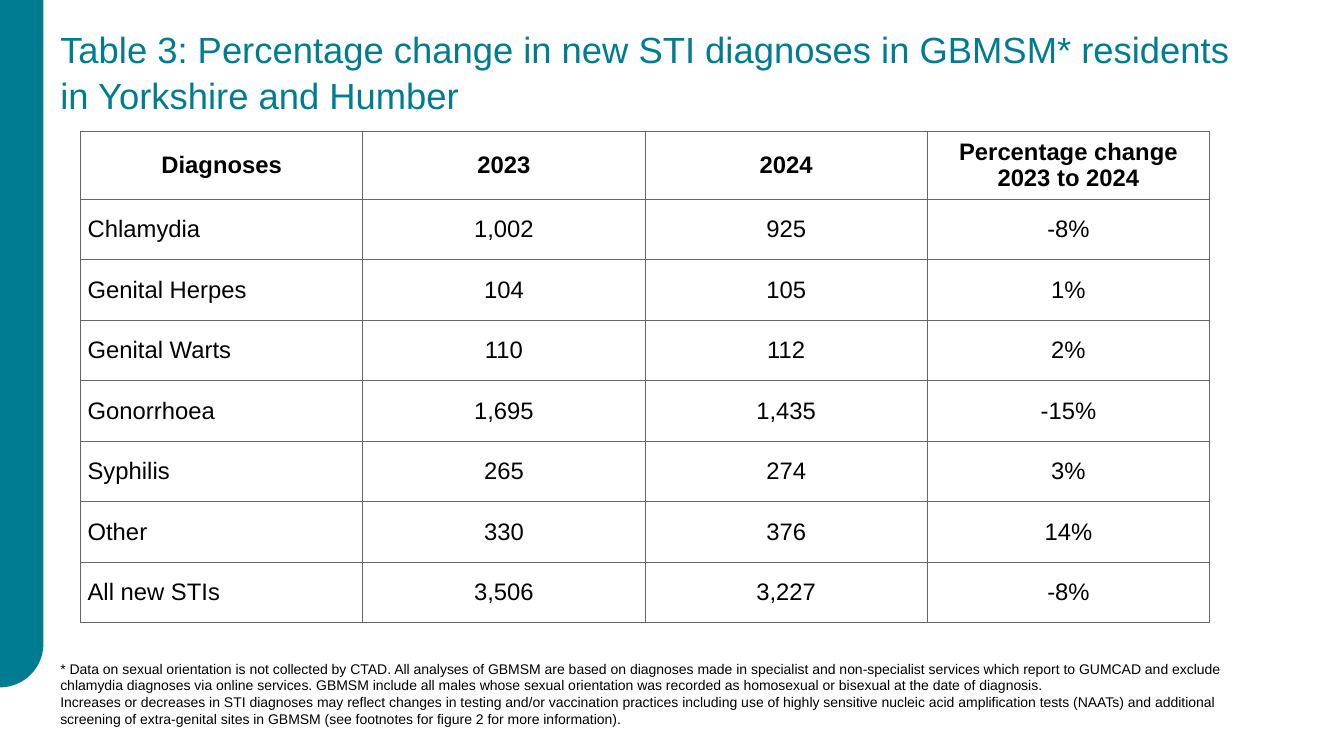
import math

import lxml.etree
import pptx
import pptx.dml.color
import pptx.enum.text
import pptx.oxml.ns
import pptx.util

Pt = pptx.util.Pt
ALIGN = pptx.enum.text.PP_ALIGN

COLOURS = {"teal": "007C91", "black": "000000", "grid": "666666"}
FONT = "Arial"

TITLE = (
    "Table 3: Percentage change in new STI diagnoses in GBMSM* residents "
    "in Yorkshire and Humber"
)
FOOTNOTE = (
    "* Data on sexual orientation is not collected by CTAD. All analyses of GBMSM "
    "are based on diagnoses made in specialist and non-specialist services which "
    "report to GUMCAD and exclude chlamydia diagnoses via online services. GBMSM "
    "include all males whose sexual orientation was recorded as homosexual or "
    "bisexual at the date of diagnosis.\v"
    "Increases or decreases in STI diagnoses may reflect changes in testing and/or "
    "vaccination practices including use of highly sensitive nucleic acid "
    "amplification tests (NAATs) and additional screening of extra-genital sites "
    "in GBMSM (see footnotes for figure 2 for more information)."
)
DIAGNOSES = [
    ("Diagnoses", "2023", "2024", "Percentage change\v2023 to 2024"),
    ("Chlamydia", "1,002", "925", "-8%"),
    ("Genital Herpes", "104", "105", "1%"),
    ("Genital Warts", "110", "112", "2%"),
    ("Gonorrhoea", "1,695", "1,435", "-15%"),
    ("Syphilis", "265", "274", "3%"),
    ("Other", "330", "376", "14%"),
    ("All new STIs", "3,506", "3,227", "-8%"),
]


def colour(name):
    return pptx.dml.color.RGBColor.from_string(COLOURS[name])


def style_paragraph(paragraph, size, colour_name, bold=False):
    font = paragraph.font
    font.name = FONT
    font.size = Pt(size)
    font.bold = bold
    font.color.rgb = colour(colour_name)


def add_side_bar(slide, width, height):
    """Bar at the left edge with a quarter-circle corner at bottom right."""
    steps = 24
    angles = [math.pi / 2 * step / steps for step in range(steps + 1)]
    arc = [
        (Pt(width * math.cos(angle)), Pt(height - width + width * math.sin(angle)))
        for angle in angles
    ]
    builder = slide.shapes.build_freeform(0, 0)
    builder.add_line_segments([(Pt(width), 0)] + arc, close=True)
    bar = builder.convert_to_shape()
    bar.shadow.inherit = False
    bar.fill.solid()
    bar.fill.fore_color.rgb = colour("teal")
    bar.line.fill.background()


def add_text(slide, text, top, height, size, colour_name, line_spacing=1.0):
    box = slide.shapes.add_textbox(Pt(36), Pt(top), Pt(864), Pt(height))
    box.text_frame.word_wrap = True
    paragraph = box.text_frame.paragraphs[0]
    paragraph.text = text
    paragraph.line_spacing = line_spacing
    style_paragraph(paragraph, size, colour_name)


def set_borders(cell, colour_name, width):
    properties = cell._tc.get_or_add_tcPr()
    for index, side in enumerate(("a:lnL", "a:lnR", "a:lnT", "a:lnB")):
        line = lxml.etree.Element(pptx.oxml.ns.qn(side), w=str(Pt(width)))
        fill = lxml.etree.SubElement(line, pptx.oxml.ns.qn("a:solidFill"))
        lxml.etree.SubElement(
            fill, pptx.oxml.ns.qn("a:srgbClr"), val=COLOURS[colour_name]
        )
        properties.insert(index, line)


def fill_cell(cell, text, centred, bold):
    cell.fill.background()
    cell.margin_left = cell.margin_right = Pt(5)
    cell.margin_top = cell.margin_bottom = Pt(4)
    cell.vertical_anchor = pptx.enum.text.MSO_ANCHOR.MIDDLE
    paragraph = cell.text_frame.paragraphs[0]
    paragraph.text = text
    paragraph.alignment = ALIGN.CENTER if centred else ALIGN.LEFT
    style_paragraph(paragraph, 17, "black", bold)
    set_borders(cell, "grid", 0.75)


def add_diagnoses_table(slide, left, top, column_width, header_height, row_height):
    rows, columns = len(DIAGNOSES), len(DIAGNOSES[0])
    height = header_height + row_height * (rows - 1)
    table = slide.shapes.add_table(
        rows, columns, Pt(left), Pt(top), Pt(column_width * columns), Pt(height)
    ).table
    table.horz_banding = False
    table.first_row = False
    for column in table.columns:
        column.width = Pt(column_width)
    for row_index, values in enumerate(DIAGNOSES):
        is_header = row_index == 0
        table.rows[row_index].height = Pt(header_height if is_header else row_height)
        for column_index, value in enumerate(values):
            fill_cell(
                table.cell(row_index, column_index),
                value,
                centred=is_header or column_index > 0,
                bold=is_header,
            )


def main():
    presentation = pptx.Presentation()
    presentation.slide_width = Pt(960)
    presentation.slide_height = Pt(540)
    slide = presentation.slides.add_slide(presentation.slide_layouts[6])

    # Side bar
    add_side_bar(slide, width=31, height=491)
    # Footnote and title
    add_text(slide, FOOTNOTE, top=468, height=22, size=10, colour_name="black")
    add_text(slide, TITLE, top=14.4, height=33, size=26, colour_name="teal",
             line_spacing=1.05)
    # Table of diagnoses
    add_diagnoses_table(slide, left=57.6, top=93.6, column_width=201.6,
                        header_height=48, row_height=43.2)

    presentation.save("out.pptx")


if __name__ == "__main__":
    main()
